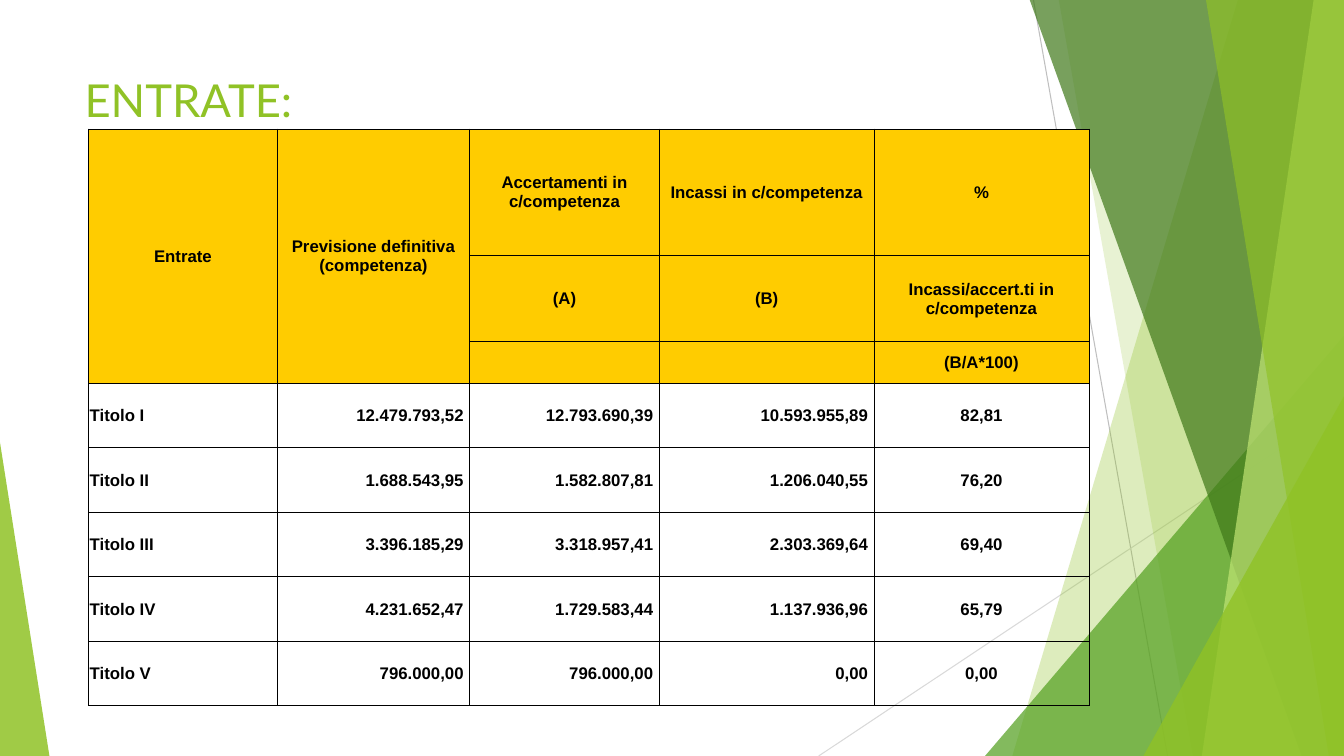
from dataclasses import dataclass

from lxml.etree import SubElement
from pptx import Presentation
from pptx.dml.color import RGBColor
from pptx.enum.shapes import MSO_CONNECTOR, MSO_SHAPE
from pptx.enum.text import MSO_ANCHOR, PP_ALIGN
from pptx.oxml.ns import qn
from pptx.shapes.autoshape import Shape
from pptx.slide import Slide
from pptx.table import _Cell
from pptx.text.text import TextFrame
from pptx.util import Emu, Pt

PX = 9144  # 100 px to the inch
WIDTH, HEIGHT = 1333, 750

WHITE = RGBColor(0xFF, 0xFF, 0xFF)
BLACK = RGBColor(0x00, 0x00, 0x00)
GOLD = RGBColor(0xFF, 0xCC, 0x00)
LIME = RGBColor(0x90, 0xC2, 0x26)
PALE_LIME = RGBColor(0xC0, 0xE4, 0x74)
GREEN = RGBColor(0x54, 0xA0, 0x21)
DARK_GREEN = RGBColor(0x3F, 0x78, 0x19)
GREY = RGBColor(0xBF, 0xBF, 0xBF)
LIGHT_GREY = RGBColor(0xD9, 0xD9, 0xD9)


@dataclass(frozen=True)
class Ray:
    start: tuple[int, int]
    end: tuple[int, int]
    color: RGBColor


@dataclass(frozen=True)
class Band:
    """A facet that reaches from its slanted left edge to the right side."""
    top_x: int
    bottom_x: int
    color: RGBColor
    opacity: int


@dataclass(frozen=True)
class Wedge:
    """A triangle standing on the bottom edge; apex runs from 0 to 1."""
    left: int
    top: int
    width: int
    apex: int
    color: RGBColor
    opacity: int


RAYS = [
    Ray((1025, 0), (1158, HEIGHT), GREY),
    Ray((WIDTH, 403), (812, HEIGHT), LIGHT_GREY),
]
FACETS = [
    Band(1228, 1004, LIME, 30),
    Band(1050, 1183, LIME, 20),
    Wedge(977, 333, 356, 1, GREEN, 72),
    Band(1021, 1291, DARK_GREEN, 70),
    Band(1303, 1192, PALE_LIME, 70),
    Band(1196, 1318, LIME, 65),
    Wedge(1134, 393, 199, 1, LIME, 80),
    Wedge(0, 439, 49, 0, LIME, 85),
]

COLUMN_WIDTHS = [187, 191, 188, 213, 213]
ROW_HEIGHTS = [125, 86, 38] + [64] * 5
HEADER_ROWS = 3
ROWS = [
    ["Entrate", "Previsione definitiva (competenza)", "Accertamenti in c/competenza",
     "Incassi in c/competenza", "%"],
    ["", "", "(A)", "(B)", "Incassi/accert.ti in c/competenza"],
    ["", "", "", "", "(B/A*100)"],
    ["Titolo I", "12.479.793,52", "12.793.690,39", "10.593.955,89", "82,81"],
    ["Titolo II", "1.688.543,95", "1.582.807,81", "1.206.040,55", "76,20"],
    ["Titolo III", "3.396.185,29", "3.318.957,41", "2.303.369,64", "69,40"],
    ["Titolo IV", "4.231.652,47", "1.729.583,44", "1.137.936,96", "65,79"],
    ["Titolo V", "796.000,00", "796.000,00", "0,00", "0,00"],
]
BODY_ALIGNMENTS = [PP_ALIGN.LEFT] + [PP_ALIGN.RIGHT] * 3 + [PP_ALIGN.CENTER]


def px(length: int) -> Emu:
    return Emu(length * PX)


def write_text(frame: TextFrame, text: str, *, size: float, font: str, color: RGBColor,
               bold: bool = False, alignment: PP_ALIGN = PP_ALIGN.LEFT) -> None:
    frame.word_wrap = True
    paragraph = frame.paragraphs[0]
    paragraph.alignment = alignment
    run = paragraph.add_run()
    run.text = text
    run.font.size = Pt(size)
    run.font.name = font
    run.font.bold = bold
    run.font.color.rgb = color


def paint(shape: Shape, color: RGBColor, opacity: int) -> None:
    shape.shadow.inherit = False
    shape.line.fill.background()
    shape.fill.solid()
    shape.fill.fore_color.rgb = color
    color_element = shape.fill._xPr.find(qn("a:solidFill"))[0]
    SubElement(color_element, qn("a:alpha"), val=str(opacity * 1000))


def draw_ray(slide: Slide, ray: Ray) -> None:
    connector = slide.shapes.add_connector(
        MSO_CONNECTOR.STRAIGHT, *map(px, ray.start + ray.end))
    connector.line.color.rgb = ray.color
    connector.line.width = Pt(0.75)
    SubElement(connector._element.spPr, qn("a:effectLst"))


def draw_facet(slide: Slide, facet: Band | Wedge) -> None:
    if isinstance(facet, Band):
        builder = slide.shapes.build_freeform(facet.top_x, -1, scale=PX)
        builder.add_line_segments([(WIDTH, -1), (WIDTH, HEIGHT), (facet.bottom_x, HEIGHT)])
        shape = builder.convert_to_shape()
    else:
        shape = slide.shapes.add_shape(
            MSO_SHAPE.ISOSCELES_TRIANGLE, px(facet.left), px(facet.top),
            px(facet.width), px(HEIGHT - facet.top))
        shape.adjustments[0] = facet.apex
    paint(shape, facet.color, facet.opacity)


def add_borders(cell: _Cell) -> None:
    properties = cell._tc.get_or_add_tcPr()
    for index, side in enumerate(("lnL", "lnR", "lnT", "lnB")):
        line = properties.makeelement(qn(f"a:{side}"), {"w": str(Pt(0.5))})
        fill = SubElement(line, qn("a:solidFill"))
        SubElement(fill, qn("a:srgbClr"), val=str(BLACK))
        properties.insert(index, line)


def format_cell(cell: _Cell, text: str, alignment: PP_ALIGN, is_header: bool) -> None:
    if is_header:
        cell.fill.solid()
        cell.fill.fore_color.rgb = GOLD
    else:
        cell.fill.background()
    add_borders(cell)
    if text:
        cell.vertical_anchor = MSO_ANCHOR.MIDDLE
        cell.margin_left = cell.margin_top = px(1)
        cell.margin_right = px(6 if alignment == PP_ALIGN.RIGHT else 1)
        cell.margin_bottom = 0
        write_text(cell.text_frame, text, size=12, font="Arial", color=BLACK,
                   bold=True, alignment=alignment)


def draw_table(slide: Slide) -> None:
    table = slide.shapes.add_table(
        len(ROW_HEIGHTS), len(COLUMN_WIDTHS), px(88), px(128),
        px(sum(COLUMN_WIDTHS)), px(sum(ROW_HEIGHTS))).table
    table.first_row = table.horz_banding = False
    for column, width in zip(table.columns, COLUMN_WIDTHS):
        column.width = px(width)
    for row, height in zip(table.rows, ROW_HEIGHTS):
        row.height = px(height)
    for row_index, texts in enumerate(ROWS):
        is_header = row_index < HEADER_ROWS
        for column_index, text in enumerate(texts):
            alignment = PP_ALIGN.CENTER if is_header else BODY_ALIGNMENTS[column_index]
            format_cell(table.cell(row_index, column_index), text, alignment, is_header)
    for column_index in (0, 1):
        table.cell(0, column_index).merge(table.cell(HEADER_ROWS - 1, column_index))


def main() -> None:
    presentation = Presentation()
    presentation.slide_width, presentation.slide_height = px(WIDTH), px(HEIGHT)
    slide = presentation.slides.add_slide(presentation.slide_layouts[6])
    slide.background.fill.solid()
    slide.background.fill.fore_color.rgb = WHITE

    # Green facets behind the content
    for ray in RAYS:
        draw_ray(slide, ray)
    for facet in FACETS:
        draw_facet(slide, facet)

    # Title
    title = slide.shapes.add_textbox(px(74), px(67), px(940), px(61))
    write_text(title.text_frame, "ENTRATE:", size=32.4, font="Lato", color=LIME)

    # Revenue table
    draw_table(slide)
    presentation.save("out.pptx")


if __name__ == "__main__":
    main()
